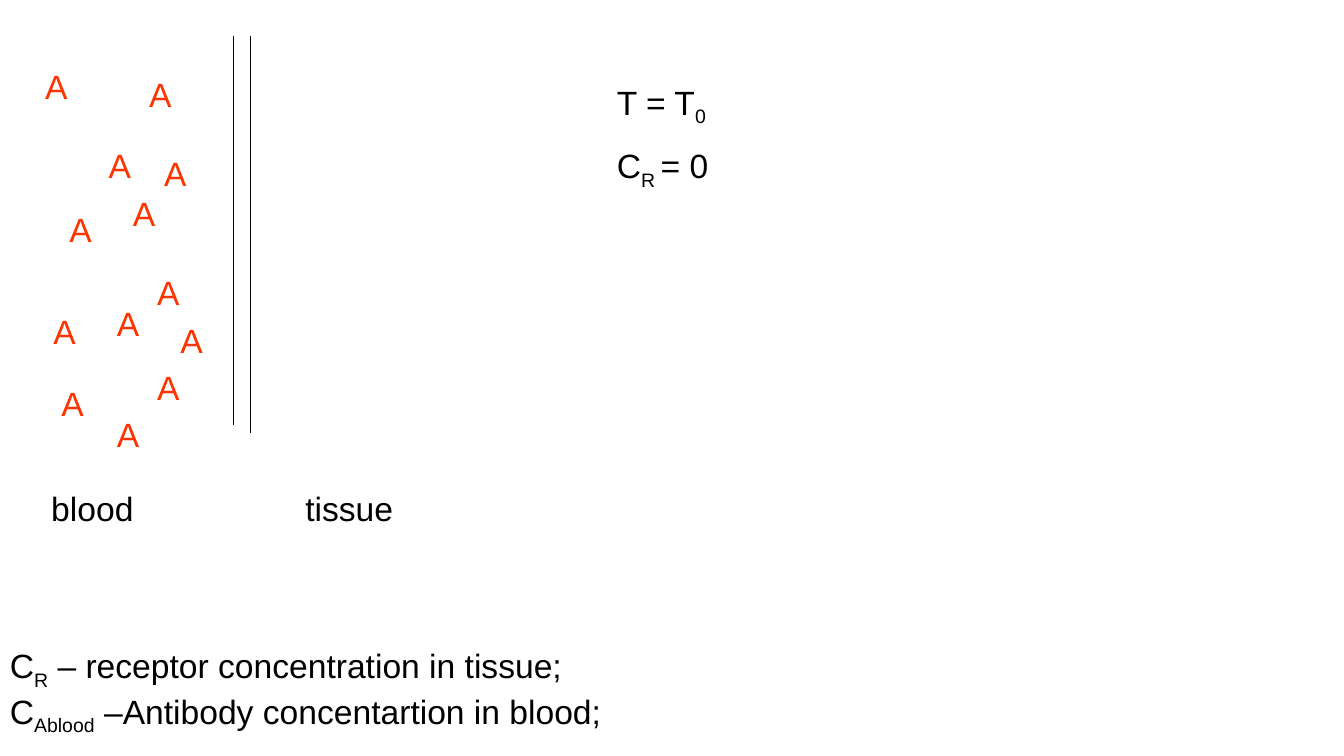
from pptx import Presentation
from pptx.dml.color import RGBColor
from pptx.enum.shapes import MSO_CONNECTOR
from pptx.enum.text import MSO_AUTO_SIZE
from pptx.oxml.ns import qn
from pptx.util import Emu, Pt
from lxml import etree

EMU_PER_PX = 9144  # 100 px to the inch
BLACK = RGBColor(0x00, 0x00, 0x00)
ORANGE_RED = RGBColor(0xFF, 0x33, 0x00)
FONT = "Arial"

# Left and top of each molecule in the blood
MOLECULES = [
    (138, 68), (35, 60), (98, 139), (122, 186), (146, 265), (59, 202), (106, 296),
    (43, 304), (146, 359), (153, 147), (169, 312), (106, 406), (51, 375),
]


def px(length):
    return Emu(length * EMU_PER_PX)


def add_text(page, text, left, top, width, height=50, color=BLACK, size=24, wrap=False):
    """Each line is a paragraph; every second part between bars is a subscript."""
    box = page.shapes.add_textbox(px(left), px(top), px(width), px(height))
    frame = box.text_frame
    frame.word_wrap = wrap
    frame.auto_size = MSO_AUTO_SIZE.SHAPE_TO_FIT_TEXT
    for index, line in enumerate(text.split("\n")):
        para = frame.add_paragraph() if index else frame.paragraphs[0]
        for position, part in enumerate(line.split("|")):
            span = para.add_run()
            span.text = part
            span.font.name = FONT
            span.font.size = Pt(size)
            span.font.color.rgb = color
            if position % 2:
                span.font._element.set("baseline", "-25000")


def add_wall(page, x, top, bottom):
    wall = page.shapes.add_connector(
        MSO_CONNECTOR.STRAIGHT, px(x), px(top), px(x), px(bottom))
    wall.line.color.rgb = BLACK
    wall.line.width = Pt(0.75)
    etree.SubElement(wall._element.spPr, qn("a:effectLst"))


def main():
    deck = Presentation()
    deck.slide_width, deck.slide_height = px(1333), px(750)
    page = deck.slides.add_slide(deck.slide_layouts[6])

    # Vessel wall between blood and tissue
    add_wall(page, 232, 36, 422)
    add_wall(page, 248, 36, 430)
    add_text(page, "blood", 41, 479, 102)
    add_text(page, "tissue", 293, 479, 107)

    # Molecules
    for left, top in MOLECULES:
        add_text(page, "A", left, top, 42, color=ORANGE_RED)

    # Starting conditions
    add_text(page, "T = T|0", 602, 76, 111)
    add_text(page, "C|R |= 0", 602, 139, 114)

    # Legend
    add_text(page, "C|R| – receptor concentration in tissue;\n"
                   "C|Ablood| –Antibody concentartion in blood;",
             0, 635, 973, height=90, wrap=True)

    deck.save("out.pptx")


if __name__ == "__main__":
    main()
